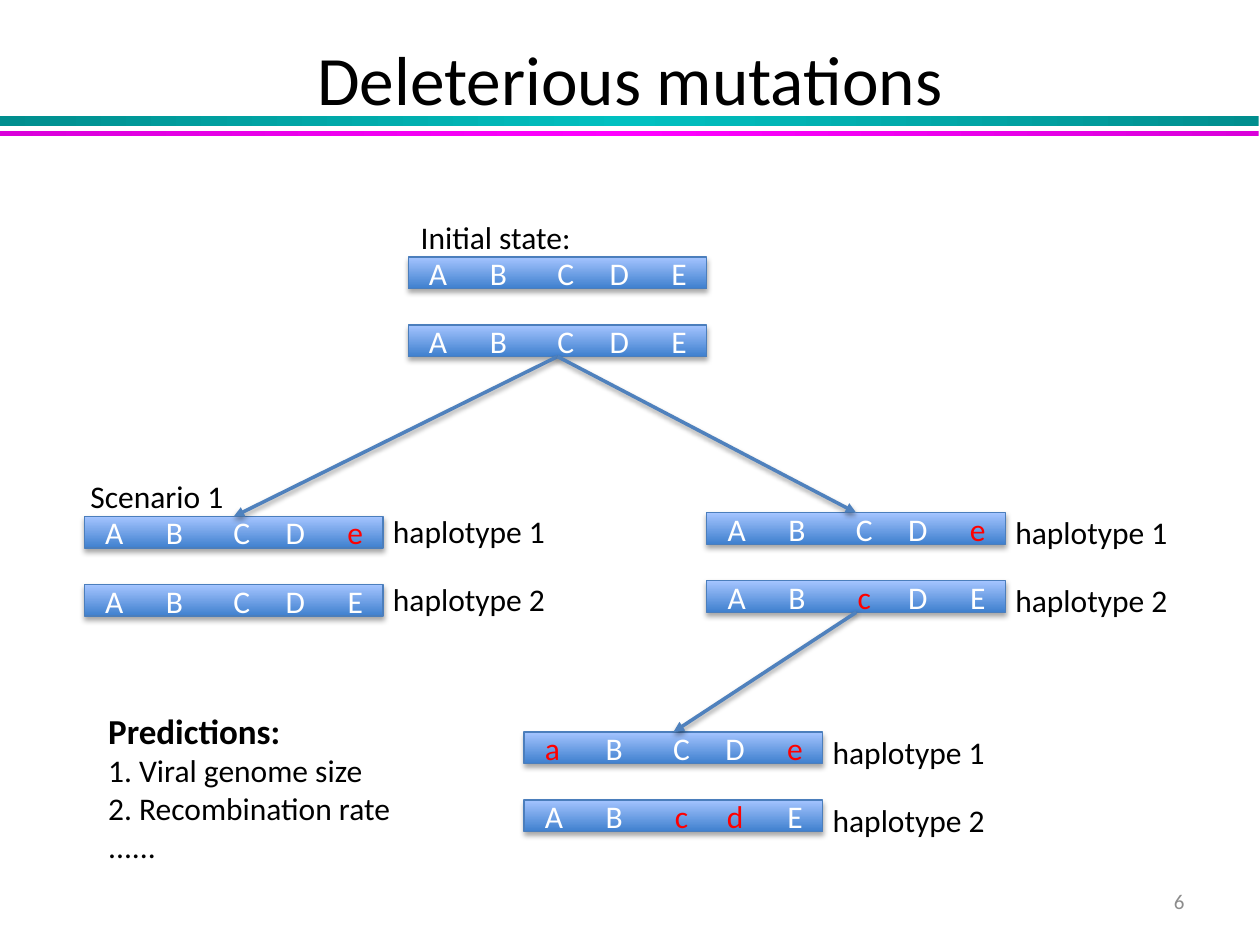
from dataclasses import dataclass

from lxml import etree
from pptx import Presentation, util as u
from pptx.dml.color import RGBColor
from pptx.enum import shapes, text
from pptx.oxml.ns import qn


@dataclass(frozen=True)
class Theme:
    font: str = "Calibri"
    ink: str = "000000"
    bar_ink: str = "FFFFFF"
    mutant: str = "FF0000"
    page_ink: str = "8C8C8C"
    bar: tuple = ("3F80CE", "A4C4FF")
    bar_edge: str = "4B7EBC"
    arrow: str = "4F81BD"
    teal: tuple = ("008E8E", "00C0C0", "008E8E")
    magenta: tuple = ("DA00DA", "FF00FF", "DA00DA")
    title_size: float = 39.6
    heading_size: float = 20
    body_size: float = 18
    page_size: float = 12


@dataclass(frozen=True)
class Run:
    words: str
    color: str = Theme.ink
    size: float = Theme.body_size
    bold: bool = False


@dataclass(frozen=True)
class Genome:
    """Two haplotype bars, placed in grid columns and rows."""
    col: float
    row: float
    haplotypes: tuple
    labelled: bool = True
    label_rise: float = 0.45


THEME = Theme()
COLS, ROWS = 100, 75
SLIDE_W, SLIDE_H = u.Inches(10), u.Inches(7.5)
BAR_W, BAR_H, BAR_STEP = 23.7, 2.5, 5.4
LABEL_OFFSET = 23.5
FIRST_LOCUS = 1.65                      # left edge of the first allele
LOCUS_CENTRES = (7.15, 12.5, 16.75, 21.5)  # centres of the other four

INITIAL = Genome(32.4, 20.4, ("ABCDE", "ABCDE"), labelled=False)
GENOMES = (
    INITIAL,
    Genome(6.7, 41, ("ABCDe", "ABCDE"), label_rise=0.85),
    Genome(56.1, 40.7, ("ABCDe", "ABcDE")),
    Genome(41.6, 58.1, ("aBCDe", "ABcdE")),
)


def x(cols: float) -> int:
    return round(SLIDE_W * cols / COLS)


def y(rows: float) -> int:
    return round(SLIDE_H * rows / ROWS)


def write(frame, paragraphs: list, *, align=text.PP_ALIGN.LEFT,
          anchor=text.MSO_ANCHOR.TOP, tabs: tuple = ()) -> None:
    """Fill a text frame with paragraphs, each a list of Runs."""
    frame.word_wrap = True
    frame.vertical_anchor = anchor
    for i, runs in enumerate(paragraphs):
        paragraph = frame.add_paragraph() if i else frame.paragraphs[0]
        paragraph.alignment = align
        if tabs:
            stops = etree.SubElement(paragraph._p.get_or_add_pPr(), qn("a:tabLst"))
            for stop in tabs:
                etree.SubElement(stops, qn("a:tab"), pos=str(x(stop)), algn="ctr")
        for item in runs:
            run = paragraph.add_run()
            run.text = item.words
            run.font.name = THEME.font
            run.font.size = u.Pt(item.size)
            run.font.bold = item.bold
            run.font.color.rgb = RGBColor.from_string(item.color)


def add_text(slide, col: float, row: float, cols: float, rows: float,
             *paragraphs: list, **style) -> None:
    box = slide.shapes.add_textbox(x(col), y(row), x(cols), y(rows))
    write(box.text_frame, list(paragraphs), **style)


def add_gradient_rect(slide, col: float, row: float, cols: float, rows: float,
                      colors: tuple, angle: float):
    rect = slide.shapes.add_shape(shapes.MSO_SHAPE.RECTANGLE,
                                  x(col), y(row), x(cols), y(rows))
    rect.shadow.inherit = False
    rect.fill.gradient()
    rect.fill.gradient_angle = angle
    stops = rect._element.spPr.find(qn("a:gradFill")).find(qn("a:gsLst"))
    for stop in list(stops):
        stops.remove(stop)
    for i, color in enumerate(colors):
        share = 100000 * i // (len(colors) - 1)
        stop = etree.SubElement(stops, qn("a:gs"), pos=str(share))
        etree.SubElement(stop, qn("a:srgbClr"), val=color)
    rect.line.fill.background()
    return rect


def add_shadow(shape, opacity: int, distance: float) -> None:
    properties = shape._element.spPr
    effects = properties.find(qn("a:effectLst"))
    if effects is None:
        effects = etree.SubElement(properties, qn("a:effectLst"))
    shadow = etree.SubElement(effects, qn("a:outerShdw"), blurRad=str(u.Pt(3.1)),
                              dist=str(u.Pt(distance)), dir="5400000", rotWithShape="0")
    color = etree.SubElement(shadow, qn("a:srgbClr"), val=THEME.ink)
    etree.SubElement(color, qn("a:alpha"), val=str(opacity * 1000))


def add_haplotype(slide, col: float, row: float, alleles: str) -> None:
    bar = add_gradient_rect(slide, col, row, BAR_W, BAR_H, THEME.bar, 90)
    bar.line.color.rgb = RGBColor.from_string(THEME.bar_edge)
    bar.line.width = u.Pt(0.75)
    add_shadow(bar, 35, 1.8)
    bar.text_frame.margin_left, bar.text_frame.margin_right = x(FIRST_LOCUS), 0
    # Lower-case alleles are mutated
    runs = [Run(("\t" if i else "") + allele,
                THEME.mutant if allele.islower() else THEME.bar_ink)
            for i, allele in enumerate(alleles)]
    write(bar.text_frame, [runs], anchor=text.MSO_ANCHOR.MIDDLE,
          tabs=tuple(centre - FIRST_LOCUS for centre in LOCUS_CENTRES))


def add_genome(slide, genome: Genome) -> None:
    for i, alleles in enumerate(genome.haplotypes):
        row = genome.row + i * BAR_STEP
        add_haplotype(slide, genome.col, row, alleles)
        if genome.labelled:
            add_text(slide, genome.col + LABEL_OFFSET, row - genome.label_rise,
                     14.5, 4, [Run(f"haplotype {i + 1}")])


def add_arrow(slide, source: Genome, target: Genome) -> None:
    """Join the bottom of one genome to the top of the next."""
    arrow = slide.shapes.add_connector(
        shapes.MSO_CONNECTOR.STRAIGHT,
        x(source.col + BAR_W / 2), y(source.row + BAR_STEP + BAR_H),
        x(target.col + BAR_W / 2), y(target.row))
    arrow.line.color.rgb = RGBColor.from_string(THEME.arrow)
    arrow.line.width = u.Pt(2)
    etree.SubElement(arrow.line._get_or_add_ln(), qn("a:tailEnd"), type="triangle")
    add_shadow(arrow, 38, 1.6)


def main() -> None:
    deck = Presentation()
    deck.slide_width, deck.slide_height = SLIDE_W, SLIDE_H
    slide = deck.slides.add_slide(deck.slide_layouts[6])

    # Header bands, title and page number
    add_gradient_rect(slide, 0, 9.2, 99.9, 0.8, THEME.teal, 0)
    add_gradient_rect(slide, 0, 10.4, 99.9, 0.4, THEME.magenta, 0)
    add_text(slide, 5, 3, 90, 6.4, [Run("Deleterious mutations", size=THEME.title_size)],
             align=text.PP_ALIGN.CENTER, anchor=text.MSO_ANCHOR.MIDDLE)
    add_text(slide, 89.2, 69.5, 5.8, 4, [Run("6", THEME.page_ink, THEME.page_size)],
             align=text.PP_ALIGN.RIGHT, anchor=text.MSO_ANCHOR.MIDDLE)

    # Genomes and the mutations that lead from one to the next
    for genome in GENOMES:
        add_genome(slide, genome)
    _, scenario, single, double = GENOMES
    for source, target in ((INITIAL, scenario), (INITIAL, single), (single, double)):
        add_arrow(slide, source, target)

    # Captions and predictions
    add_text(slide, 32.4, 16.8, 21.9, 4, [Run("Initial state:")])
    add_text(slide, 6.2, 37.4, 14, 4, [Run("Scenario 1")])
    add_text(slide, 7.6, 55.8, 25.2, 13.5,
             [Run("Predictions:", size=THEME.heading_size, bold=True)],
             [Run("1. Viral genome size")],
             [Run("2. Recombination rate")],
             [Run("......")])

    deck.save("out.pptx")


if __name__ == "__main__":
    main()
